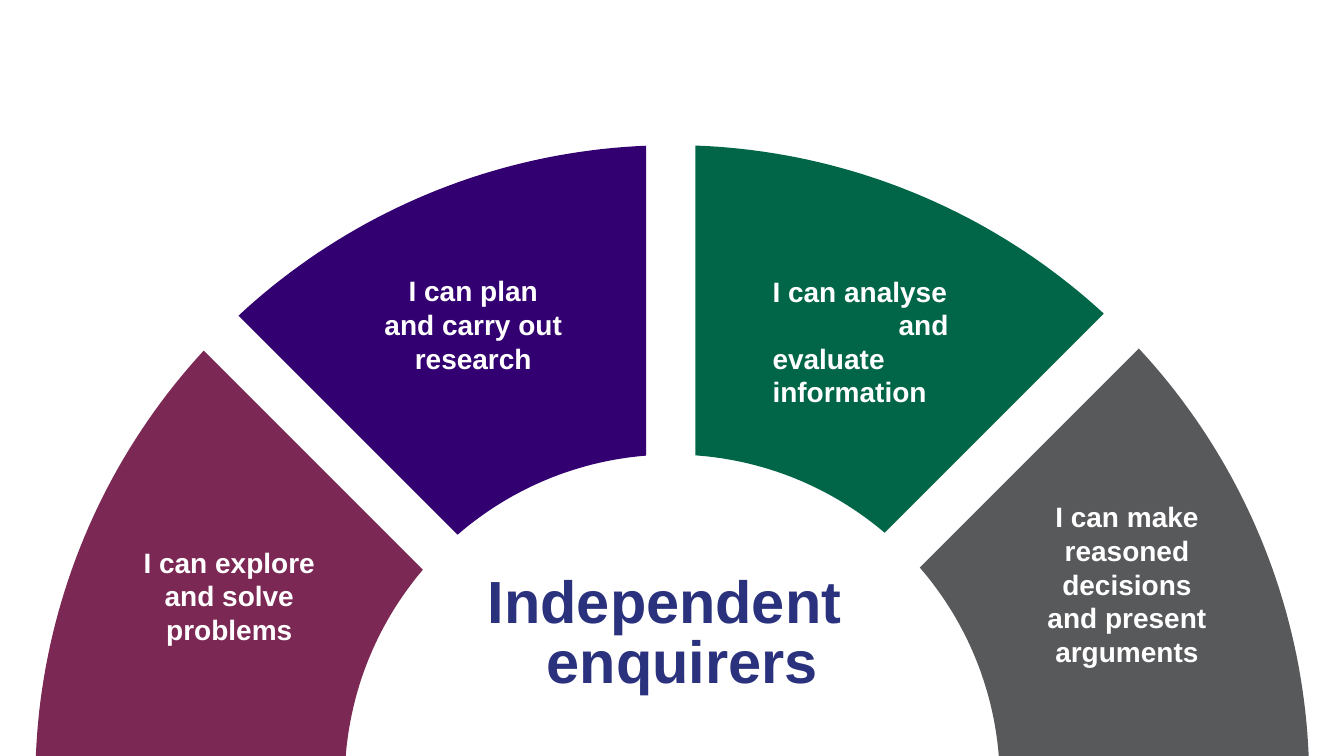
"""Build the independent enquirers slide: a half wheel of four skills."""
import math

import pptx
import pptx.dml.color
import pptx.enum.text
import pptx.util

Pt = pptx.util.Pt
ALIGN = pptx.enum.text.PP_ALIGN

COLOURS = {
    "plum": "7C2854",
    "purple": "330072",
    "green": "006647",
    "grey": "58595B",
    "navy": "2A317D",
    "white": "FFFFFF",
}

WEDGES = [
    ("plum", 18.7, 18.7),
    ("purple", 16.6, 18.7),
    ("green", 16.6, 18.7),
    ("grey", 16.6, 18.7),
]

HEADING = {
    "lines": [("Independent enquirers", ALIGN.LEFT)],
    "box": (348.5, 399.6, 255.6, 96.5),
    "top_inset": 11, "size": 42.5, "spacing": 43, "colour": "navy",
    "margin": 42, "indent": -42,
}
SKILL_STYLE = {"top_inset": 2, "size": 20, "spacing": 24, "colour": "white"}
SKILLS = [
    {"lines": [("I can make reasoned decisions and present arguments", ALIGN.CENTER)],
     "box": (747.4, 355, 115.2, 121.7)},
    {"lines": [("I can explore and solve problems", ALIGN.CENTER)],
     "box": (101.5, 387.4, 124.6, 74.2)},
    {"lines": [("I can plan and carry out research", ALIGN.CENTER)],
     "box": (273.6, 193.7, 128.9, 74.2)},
    {"lines": [("I can analyse", ALIGN.LEFT), ("and", ALIGN.RIGHT),
               ("evaluate", ALIGN.LEFT), ("information", ALIGN.LEFT)],
     "box": (550.8, 193.7, 126.7, 98), "margin": 2, "indent": -1},
]

CENTRE_X, CENTRE_Y = 480.2, 558.7
OUTER_RADIUS, INNER_RADIUS = 455, 234
ARC_STEPS = 40


def colour(name):
    return pptx.dml.color.RGBColor.from_string(COLOURS[name])


def arc(radius, first_axis, last_axis, first_gap, last_gap):
    first = math.radians(first_axis) + math.asin(first_gap / radius)
    last = math.radians(last_axis) - math.asin(last_gap / radius)
    angles = [first + (last - first) * step / ARC_STEPS for step in range(ARC_STEPS + 1)]
    return [(Pt(CENTRE_X + radius * math.sin(angle)), Pt(CENTRE_Y - radius * math.cos(angle)))
            for angle in angles]


def add_wedge(slide, index, fill, first_gap, last_gap):
    sweep = 180 / len(WEDGES)
    first_axis = -90 + sweep * index
    limits = (first_axis, first_axis + sweep, first_gap, last_gap)
    points = arc(OUTER_RADIUS, *limits) + arc(INNER_RADIUS, *limits)[::-1]
    builder = slide.shapes.build_freeform(*points[0])
    builder.add_line_segments(points[1:], close=True)
    shape = builder.convert_to_shape()
    shape.shadow.inherit = False
    shape.fill.solid()
    shape.fill.fore_color.rgb = colour(fill)
    shape.line.fill.background()


def add_label(slide, lines, box, top_inset, size, spacing, colour_name, margin=0, indent=0):
    text_frame = slide.shapes.add_textbox(*map(Pt, box)).text_frame
    text_frame.word_wrap = True
    text_frame.margin_left = text_frame.margin_right = text_frame.margin_bottom = 0
    text_frame.margin_top = Pt(top_inset)
    text_frame.text = "\n".join(text for text, _ in lines)
    for paragraph, (_, alignment) in zip(text_frame.paragraphs, lines):
        paragraph.alignment = alignment
        paragraph.line_spacing = Pt(spacing)
        properties = paragraph._p.get_or_add_pPr()
        properties.set("marL", str(Pt(margin)))
        properties.set("indent", str(Pt(indent)))
        for run in paragraph.runs:
            run.font.name = "Arial"
            run.font.size = Pt(size)
            run.font.bold = True
            run.font.color.rgb = colour(colour_name)


def main():
    presentation = pptx.Presentation()
    presentation.slide_width, presentation.slide_height = Pt(960), Pt(540)
    slide = presentation.slides.add_slide(presentation.slide_layouts[6])
    for index, wedge in enumerate(WEDGES):
        add_wedge(slide, index, *wedge)
    for label in [HEADING] + [{**SKILL_STYLE, **skill} for skill in SKILLS]:
        options = dict(label)
        add_label(slide, colour_name=options.pop("colour"), **options)
    presentation.save("out.pptx")


if __name__ == "__main__":
    main()
